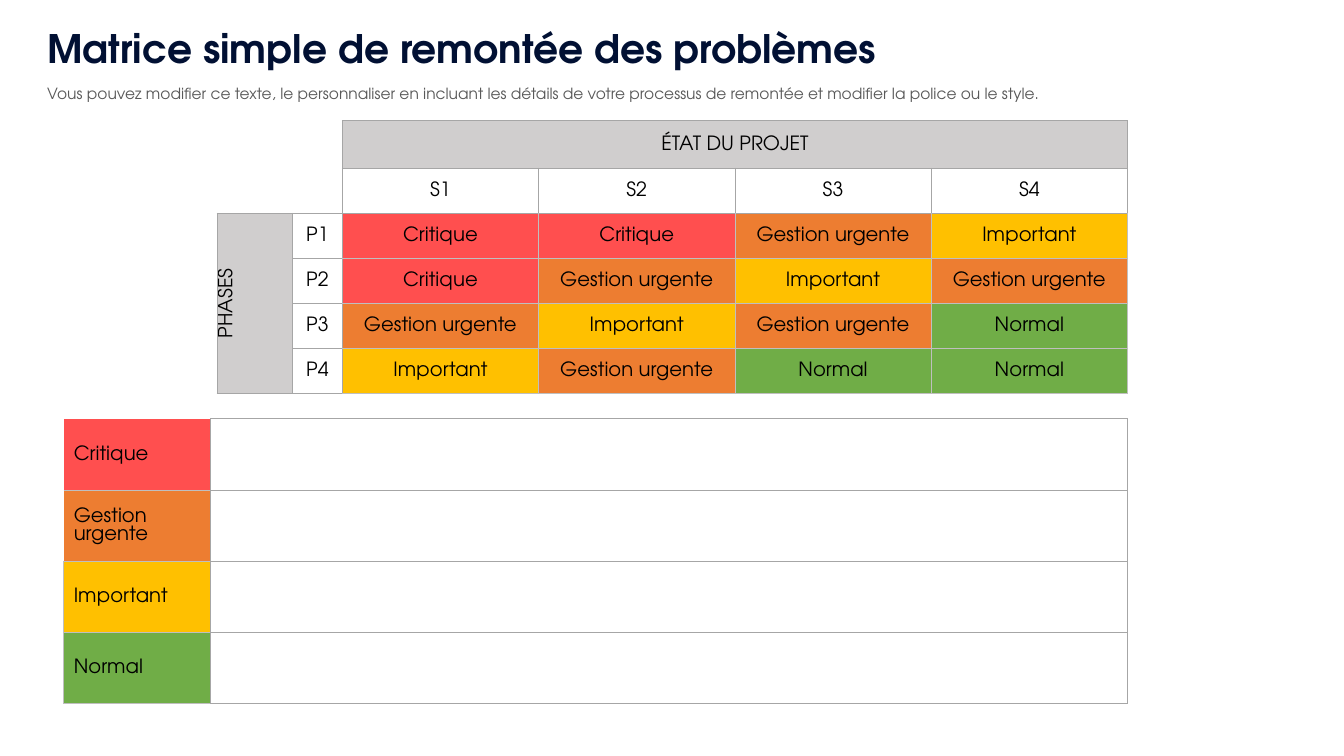
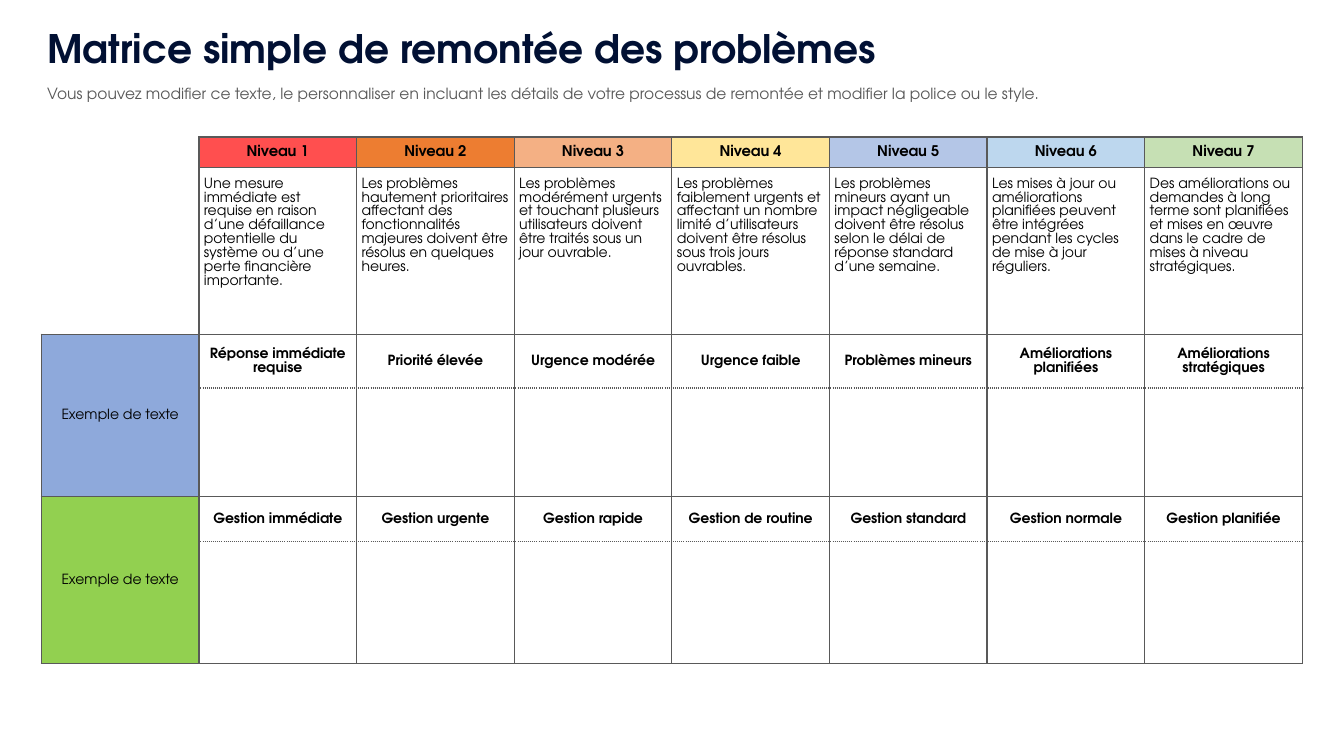
from lxml.etree import SubElement
from pptx import Presentation
from pptx.dml.color import RGBColor
from pptx.enum.text import MSO_ANCHOR, MSO_AUTO_SIZE, PP_ALIGN
from pptx.oxml.ns import qn
from pptx.util import Pt

FONT = "TeX Gyre Adventor"
NAVY, BLACK, WHITE = "011033", "000000", "FFFFFF"
DARK_GREY, MID_GREY, LIGHT_GREY, HEADER_GREY = "595959", "A6A6A6", "BFBFBF", "D0CECE"
NO_STYLE_NO_GRID = "{2D5ABB26-0587-4C30-8999-92F81FD0307C}"

TITLE = "Matrice simple de remontée des problèmes"
SUBTITLE = ("Vous pouvez modifier ce texte, le personnaliser en incluant les détails de votre "
            "processus de remontée et modifier la police ou le style.")

STATUS_FILLS = {
    "Critique": "FF4F4F",
    "Gestion urgente": "ED7D31",
    "Important": "FFC000",
    "Normal": "70AD47",
}
PHASE_STATUSES = [
    ["Critique", "Critique", "Gestion urgente", "Important"],
    ["Critique", "Gestion urgente", "Important", "Gestion urgente"],
    ["Gestion urgente", "Important", "Gestion urgente", "Normal"],
    ["Important", "Gestion urgente", "Normal", "Normal"],
]

# Fill, description, response, handling
LEVELS = [
    ("FF4F4F", "Une mesure immédiate est requise en raison d’une défaillance potentielle "
     "du système ou d’une perte financière importante.",
     "Réponse immédiate requise", "Gestion immédiate"),
    ("ED7D31", "Les problèmes hautement prioritaires affectant des fonctionnalités majeures "
     "doivent être résolus en quelques heures.",
     "Priorité élevée", "Gestion urgente"),
    ("F4B084", "Les problèmes modérément urgents et touchant plusieurs utilisateurs doivent "
     "être traités sous un jour ouvrable.",
     "Urgence modérée", "Gestion rapide"),
    ("FFE699", "Les problèmes faiblement urgents et affectant un nombre limité d’utilisateurs "
     "doivent être résolus sous trois jours ouvrables.",
     "Urgence faible", "Gestion de routine"),
    ("B4C6E7", "Les problèmes mineurs ayant un impact négligeable doivent être résolus selon "
     "le délai de réponse standard d’une semaine.",
     "Problèmes mineurs", "Gestion standard"),
    ("BDD7EE", "Les mises à jour ou améliorations planifiées peuvent être intégrées pendant "
     "les cycles de mise à jour réguliers.",
     "Améliorations planifiées", "Gestion normale"),
    ("C6E0B4", "Des améliorations ou demandes à long terme sont planifiées et mises en œuvre "
     "dans le cadre de mises à niveau stratégiques.",
     "Améliorations stratégiques", "Gestion planifiée"),
]


def rgb(colour):
    return RGBColor.from_string(colour)


def write(frame, text, *, size, colour=BLACK, bold=False, align=PP_ALIGN.LEFT,
          spacing=None, before=None):
    paragraph = frame.paragraphs[0]
    paragraph.alignment = align
    paragraph.line_spacing = spacing
    if before is not None:
        paragraph.space_before = Pt(before)
    run = paragraph.add_run()
    run.text = text
    run.font.name = FONT
    run.font.size = Pt(size)
    run.font.bold = bold
    run.font.color.rgb = rgb(colour)


def edges(colour, sides="LRTB"):
    return dict.fromkeys(sides, colour)


def draw_edges(cell, colours, width, dotted):
    properties = cell._tc.get_or_add_tcPr()
    for side in "LRTB":
        if side in colours:
            line = SubElement(properties, qn(f"a:ln{side}"), w=str(Pt(width)))
            solid = SubElement(line, qn("a:solidFill"))
            SubElement(solid, qn("a:srgbClr"), val=colours[side])
            SubElement(line, qn("a:prstDash"), val="sysDot" if side in dotted else "solid")


def fill_cell(cell, text="", *, borders, width=0.5, dotted="", fill=None,
              insets=(0.72, 0.72, 0.72, 0), anchor=MSO_ANCHOR.MIDDLE, vertical=False,
              size=14, **text_format):
    """Format one cell; borders maps sides (L, R, T, B) to colours."""
    draw_edges(cell, borders, width, dotted)
    if fill:
        cell.fill.solid()
        cell.fill.fore_color.rgb = rgb(fill)
    else:
        cell.fill.background()
    cell.margin_left, cell.margin_top, cell.margin_right, cell.margin_bottom = map(Pt, insets)
    cell.vertical_anchor = anchor
    if vertical:
        cell._tc.get_or_add_tcPr().set("vert", "vert270")
    if text:
        write(cell.text_frame, text, size=size, **text_format)
    else:
        end = cell.text_frame.paragraphs[0]._p.get_or_add_endParaRPr()
        end.set("sz", str(size * 100))


def fill_merged(cells, text, **cell_format):
    """Merge a run of neighbouring cells and give them one text."""
    first, *others = cells
    fill_cell(first, text, **cell_format)
    for other in others:
        fill_cell(other, **cell_format)
    first.merge(others[-1])


def add_grid(slide, left, top, widths, heights):
    frame = slide.shapes.add_table(len(heights), len(widths), Pt(left), Pt(top),
                                   Pt(sum(widths)), Pt(sum(heights)))
    table = frame.table
    table.first_row = table.horz_banding = False
    table._tbl.tblPr.find(qn("a:tableStyleId")).text = NO_STYLE_NO_GRID
    for column, width in zip(table.columns, widths):
        column.width = Pt(width)
    for row, height in zip(table.rows, heights):
        row.height = Pt(height)
    return table


def place(shape, left, top, width, height):
    shape.left, shape.top, shape.width, shape.height = map(Pt, (left, top, width, height))


def add_headed_slide(deck):
    slide = deck.slides.add_slide(deck.slide_layouts[5])
    heading = slide.shapes.title
    place(heading, 26.64, 13.7, 754, 41)
    subtitle = slide.shapes.add_textbox(Pt(26.64), Pt(56.5), Pt(796), Pt(22))
    for shape in (heading, subtitle):
        frame = shape.text_frame
        frame.word_wrap = True
        frame.auto_size = MSO_AUTO_SIZE.NONE
        frame.vertical_anchor = MSO_ANCHOR.TOP
    write(heading.text_frame, TITLE, size=28, colour=NAVY, bold=True)
    write(subtitle.text_frame, SUBTITLE, size=11, colour=DARK_GREY)
    return slide


def add_status_matrix(slide):
    table = add_grid(slide, 155, 86, [54, 35.5] + [140.25] * 4, [34] + [32.25] * 5)
    boxed = {"borders": edges(MID_GREY), "align": PP_ALIGN.CENTER}

    fill_cell(table.cell(0, 0), borders={})
    fill_cell(table.cell(0, 1), borders=edges(MID_GREY, "R"))
    fill_cell(table.cell(1, 0), borders=edges(MID_GREY, "B"), fill=WHITE)
    fill_cell(table.cell(1, 1), borders=edges(MID_GREY, "RB"), fill=WHITE)
    fill_merged([table.cell(0, column) for column in range(2, 6)], "ÉTAT DU PROJET",
                fill=HEADER_GREY, **boxed)
    fill_merged([table.cell(row, 0) for row in range(2, 6)], "PHASES",
                fill=HEADER_GREY, vertical=True, **boxed)

    for phase, statuses in enumerate(PHASE_STATUSES):
        fill_cell(table.cell(1, phase + 2), f"S{phase + 1}", fill=WHITE, **boxed)
        fill_cell(table.cell(phase + 2, 1), f"P{phase + 1}", fill=WHITE, **boxed)
        for state, status in enumerate(statuses):
            header_sides = ("L" if state == 0 else "") + ("T" if phase == 0 else "")
            fill_cell(table.cell(phase + 2, state + 2), status, fill=STATUS_FILLS[status],
                      borders=edges(LIGHT_GREY) | edges(MID_GREY, header_sides),
                      align=PP_ALIGN.CENTER)


def add_status_legend(slide):
    table = add_grid(slide, 45.5, 299, [104.75, 655], [50.9] * len(STATUS_FILLS))
    label_sides = ["B", "TB", "LTB", "LTB"]
    for row, ((status, fill), sides) in enumerate(zip(STATUS_FILLS.items(), label_sides)):
        fill_cell(table.cell(row, 0), status, fill=fill, insets=(7.2, 0.72, 0.72, 0),
                  borders=edges(LIGHT_GREY, sides) | edges(MID_GREY, "R"))
        fill_cell(table.cell(row, 1), borders=edges(MID_GREY))


def add_level_table(slide):
    table = add_grid(slide, 29.5, 97.9, [112.6] * (len(LEVELS) + 1),
                     [21.5, 119.3, 38.5, 77.4, 32.5, 86.8])
    base = {"width": 1, "size": 10, "insets": (3.6, 0, 3.6, 0)}
    boxed = base | {"borders": edges(DARK_GREY)}
    centred = boxed | {"align": PP_ALIGN.CENTER, "spacing": 1.07}

    fill_cell(table.cell(0, 0), borders=edges(DARK_GREY, "R"), **base)
    fill_cell(table.cell(1, 0), borders=edges(DARK_GREY, "RB"), **base)
    for row, fill in ((2, "8EA9DB"), (4, "92D050")):
        fill_merged([table.cell(row, 0), table.cell(row + 1, 0)], "Exemple de texte",
                    fill=fill, **centred)

    for level, (fill, description, response, handling) in enumerate(LEVELS, start=1):
        fill_cell(table.cell(0, level), f"Niveau {level}", fill=fill, bold=True,
                  **centred | {"size": 10.5})
        fill_cell(table.cell(1, level), description, anchor=MSO_ANCHOR.TOP, spacing=1.07,
                  before=12, **boxed | {"insets": (3.6, 7.2, 3.6, 0)})
        for row, action in ((2, response), (4, handling)):
            fill_cell(table.cell(row, level), action, bold=True, dotted="B", **centred)
            fill_cell(table.cell(row + 1, level), dotted="T", **boxed)


def main():
    deck = Presentation()
    deck.slide_width, deck.slide_height = Pt(960), Pt(540)

    status_slide = add_headed_slide(deck)
    add_status_matrix(status_slide)
    add_status_legend(status_slide)

    add_level_table(add_headed_slide(deck))
    deck.save("out.pptx")


if __name__ == "__main__":
    main()
